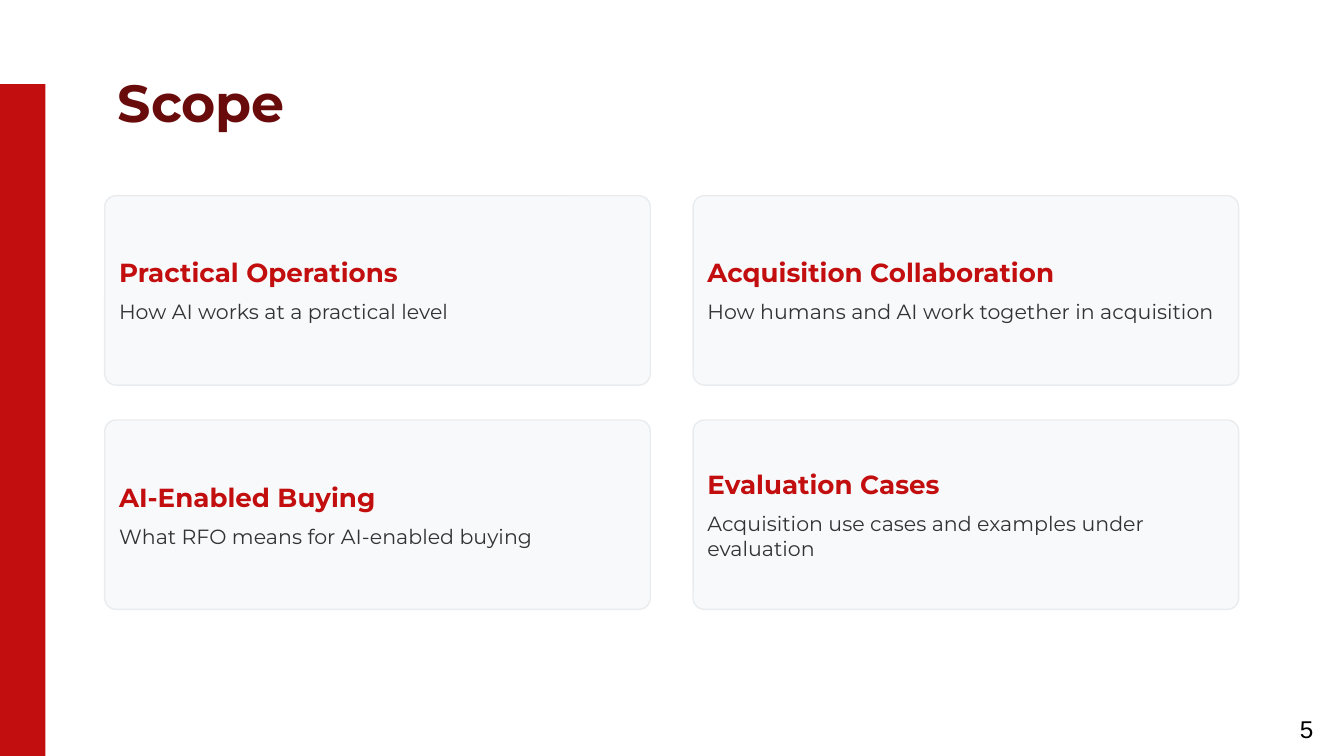
from pptx import Presentation
from pptx.dml.color import RGBColor
from pptx.enum.shapes import MSO_SHAPE
from pptx.enum.text import MSO_ANCHOR, PP_ALIGN
from pptx.util import Cm, Pt

RED = "C20E0E"
CARDS = [
    ("Practical Operations", "How AI works at a practical level"),
    ("Acquisition Collaboration", "How humans and AI work together in acquisition"),
    ("AI-Enabled Buying", "What RFO means for AI-enabled buying"),
    ("Evaluation Cases", "Acquisition use cases and examples under evaluation"),
]
LEFT, TOP = 1.98, 3.7
CARD_W, CARD_H = 10.31, 3.58
STEP_X, STEP_Y = 11.12, 4.24
PAD_X, PAD_Y = 0.27, 0.27
TEXT_H = 3.04


def color(value):
    return RGBColor.from_string(value)


class Deck:
    font = "Montserrat"

    def __init__(self, width, height):
        self.prs = Presentation()
        self.prs.slide_width, self.prs.slide_height = Cm(width), Cm(height)
        self.s = None

    def add_slide(self):
        self.s = self.prs.slides.add_slide(self.prs.slide_layouts[6])

    def box(self, kind, x, y, w, h, fill, line=None, parent=None):
        shapes = (parent or self.s).shapes
        sp = shapes.add_shape(kind, Cm(x), Cm(y), Cm(w), Cm(h))
        sp.shadow.inherit = False
        sp.fill.solid()
        sp.fill.fore_color.rgb = color(fill)
        if line:
            sp.line.color.rgb = color(line)
            sp.line.width = Pt(0.75)
        else:
            sp.line.fill.background()
        return sp

    def text(self, x, y, w, h, lines, inset=0.25, anchor=MSO_ANCHOR.TOP,
             align=PP_ALIGN.LEFT, font=None, gap=0, parent=None):
        """Add a text box; each line is (text, size, colour, bold)."""
        sp = (parent or self.s).shapes.add_textbox(Cm(x), Cm(y), Cm(w), Cm(h))
        tf = sp.text_frame
        tf.word_wrap = True
        tf.vertical_anchor = anchor
        tf.margin_left = tf.margin_right = Cm(inset)
        tf.margin_top = tf.margin_bottom = Cm(inset)
        for i, (words, size, shade, bold) in enumerate(lines):
            p = tf.add_paragraph() if i else tf.paragraphs[0]
            p.alignment = align
            if i:
                p.space_before = Pt(gap)
            r = p.add_run()
            r.text = words
            r.font.name = font or self.font
            r.font.size = Pt(size)
            r.font.bold = bold
            r.font.color.rgb = color(shade)

    def card(self, x, y, heading, body):
        group = self.s.shapes.add_group_shape()
        sp = self.box(MSO_SHAPE.ROUNDED_RECTANGLE, x, y, CARD_W, CARD_H,
                      "F8F9FA", "E9ECEF", group)
        sp.adjustments[0] = 0.06
        self.text(x + PAD_X, y + PAD_Y, CARD_W - 2 * PAD_X, TEXT_H,
                  [(heading, 14, RED, True), (body, 11, "333333", False)],
                  inset=0, anchor=MSO_ANCHOR.MIDDLE, gap=6, parent=group)


def main():
    deck = Deck(25.4, 14.29)
    deck.add_slide()
    deck.box(MSO_SHAPE.RECTANGLE, 0, 1.59, 0.86, 12.7, RED)
    deck.text(23.55, 13.26, 1.52, 1.09, [("5", 13, "000000", False)],
              align=PP_ALIGN.RIGHT, font="Arial")
    deck.text(LEFT, 1.07, 21.44, 1.6, [("Scope", 28, "690B0B", True)])
    for i, (heading, body) in enumerate(CARDS):
        row, col = divmod(i, 2)
        deck.card(LEFT + col * STEP_X, TOP + row * STEP_Y, heading, body)
    deck.prs.save("out.pptx")


if __name__ == "__main__":
    main()
